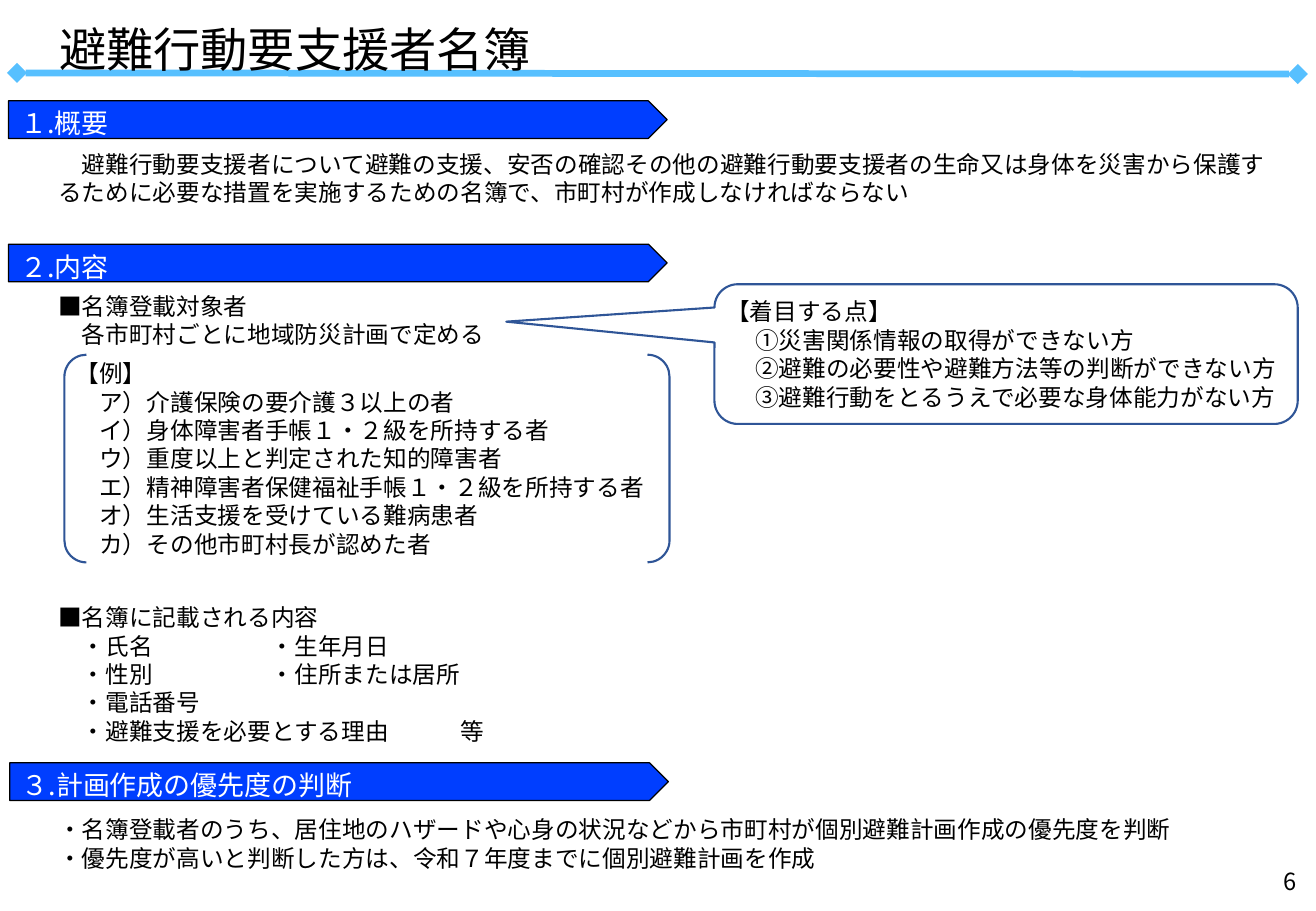
from lxml import etree
from pptx import Presentation
from pptx.dml.color import RGBColor as RGB
from pptx.enum.shapes import MSO_CONNECTOR, MSO_SHAPE as SHAPE
from pptx.enum.text import MSO_ANCHOR as ANCHOR, PP_ALIGN as ALIGN
from pptx.oxml.ns import qn
from pptx.util import Inches, Pt

FONT = "Noto Sans CJK JP"
COLORS = {"text": "000000", "white": "FFFFFF", "banner": "003EFF",
          "rule": "57C0FF", "outline": "2F5597"}
W, H = 10.83, 7.5
MARGIN, BODY_W = 0.38, 10.27
LINE_PT = 16.8  # height of one body line

prs = Presentation()
prs.slide_width, prs.slide_height = Inches(W), Inches(H)
s = prs.slides.add_slide(prs.slide_layouts[6])


def write(sp, lines, size=14, color="text", anchor=ANCHOR.TOP, align=ALIGN.LEFT,
          before=0, inset=0.1):
    tf = sp.text_frame
    frame = {"word_wrap": True, "vertical_anchor": anchor,
             "margin_left": Inches(inset), "margin_right": Inches(inset)}
    for name, value in frame.items():
        setattr(tf, name, value)
    for i, line in enumerate(lines):
        p = tf.paragraphs[0] if i == 0 else tf.add_paragraph()
        p.alignment, p.space_before = align, Pt(before)
        r = p.add_run()
        r.text = line
        for name, value in {"size": Pt(size), "name": FONT}.items():
            setattr(r.font, name, value)
        r.font.color.rgb = RGB.from_string(COLORS[color])
        etree.SubElement(r.font._element, qn("a:ea"), typeface=FONT)
    return tf


def add_shape(kind, box, line, width, fill=None):
    sp = s.shapes.add_shape(kind, *map(Inches, box))
    sp.shadow.inherit = False
    sp.line.color.rgb = RGB.from_string(COLORS[line])
    sp.line.width = Pt(width)
    if fill:
        sp.fill.solid()
        sp.fill.fore_color.rgb = RGB.from_string(COLORS[fill])
    else:
        sp.fill.background()
    return sp


# Rule under the title, with a diamond at each end
rule = s.shapes.add_connector(MSO_CONNECTOR.STRAIGHT, *map(Inches, (0.14, 0.6, 10.68, 0.61)))
rule.line.color.rgb = RGB.from_string(COLORS["rule"])
rule.line.width = Pt(4)
for end in ("a:headEnd", "a:tailEnd"):
    etree.SubElement(rule.line._get_or_add_ln(), qn(end), type="diamond")
etree.SubElement(rule._element.spPr, qn("a:effectLst"))

# Title
title = s.shapes.add_textbox(0, Inches(0.12), Inches(W), Inches(0.48))
write(title, ["　避難行動要支援者名簿"], size=28, before=5.6)

# Section banners
for left, top, heading in ((0.07, 0.83, "１.概要"), (0.07, 2.01, "２.内容"),
                           (0.08, 6.28, "３.計画作成の優先度の判断")):
    banner = add_shape(SHAPE.PENTAGON, (left, top, 5.42, 0.31), "text", 0.75, "banner")
    write(banner, [heading], size=16, color="white", before=3.2)

# Paragraphs of sections 1 and 3, page number
for box, lines, align in (
    ((MARGIN, 1.19, BODY_W, 0.55),
     ["　避難行動要支援者について避難の支援、安否の確認その他の避難行動要支援者の生命又は身体を"
      "災害から保護するために必要な措置を実施するための名簿で、市町村が作成しなければならない"],
     ALIGN.LEFT),
    ((MARGIN, 6.67, BODY_W, 0.55),
     ["・名簿登載者のうち、居住地のハザードや心身の状況などから市町村が個別避難計画作成の優先度を判断",
      "・優先度が高いと判断した方は、令和７年度までに個別避難計画を作成"], ALIGN.LEFT),
    ((8.5, 7.05, 2.27, 0.4), ["6"], ALIGN.RIGHT),
):
    write(s.shapes.add_textbox(*map(Inches, box)), lines, anchor=ANCHOR.MIDDLE, align=align)

# Section 2: who is listed and what is recorded
contents = s.shapes.add_textbox(*map(Inches, (MARGIN, 2.35, 5.67, 3.84)))
tf = write(contents, [
    "■名簿登載対象者", "　各市町村ごとに地域防災計画で定める", "■名簿に記載される内容",
    "　・氏名\t・生年月日", "　・性別\t・住所または居所", "　・電話番号",
    "　・避難支援を必要とする理由\t等"])
tf.paragraphs[2].space_before = Pt(9 * LINE_PT)  # room for the bracketed examples
for row, stop in ((3, 1.75), (4, 1.75), (6, 3.31)):
    tabs = etree.SubElement(tf.paragraphs[row]._p.get_or_add_pPr(), qn("a:tabLst"))
    etree.SubElement(tabs, qn("a:tab"), pos=str(Inches(stop)), algn="l")

# Callout and bracketed examples
for kind, box, adjustments, lines in (
    (SHAPE.ROUNDED_RECTANGULAR_CALLOUT, (5.88, 2.34, 4.8, 1.15), (-0.857, -0.232, 0.167),
     ["【着目する点】", " 　①災害関係情報の取得ができない方",
      " 　②避難の必要性や避難方法等の判断ができない方",
      " 　③避難行動をとるうえで必要な身体能力がない方"]),
    (SHAPE.DOUBLE_BRACKET, (0.53, 2.92, 4.98, 1.71), (0.106,),
     ["【例】", "　ア）介護保険の要介護３以上の者", "　イ）身体障害者手帳１・２級を所持する者",
      "　ウ）重度以上と判定された知的障害者", "　エ）精神障害者保健福祉手帳１・２級を所持する者",
      "　オ）生活支援を受けている難病患者", "　カ）その他市町村長が認めた者"]),
):
    sp = add_shape(kind, box, "outline", 1.25)
    for i, value in enumerate(adjustments):
        sp.adjustments[i] = value
    write(sp, lines, anchor=ANCHOR.MIDDLE, inset=0.04)

prs.save("out.pptx")
